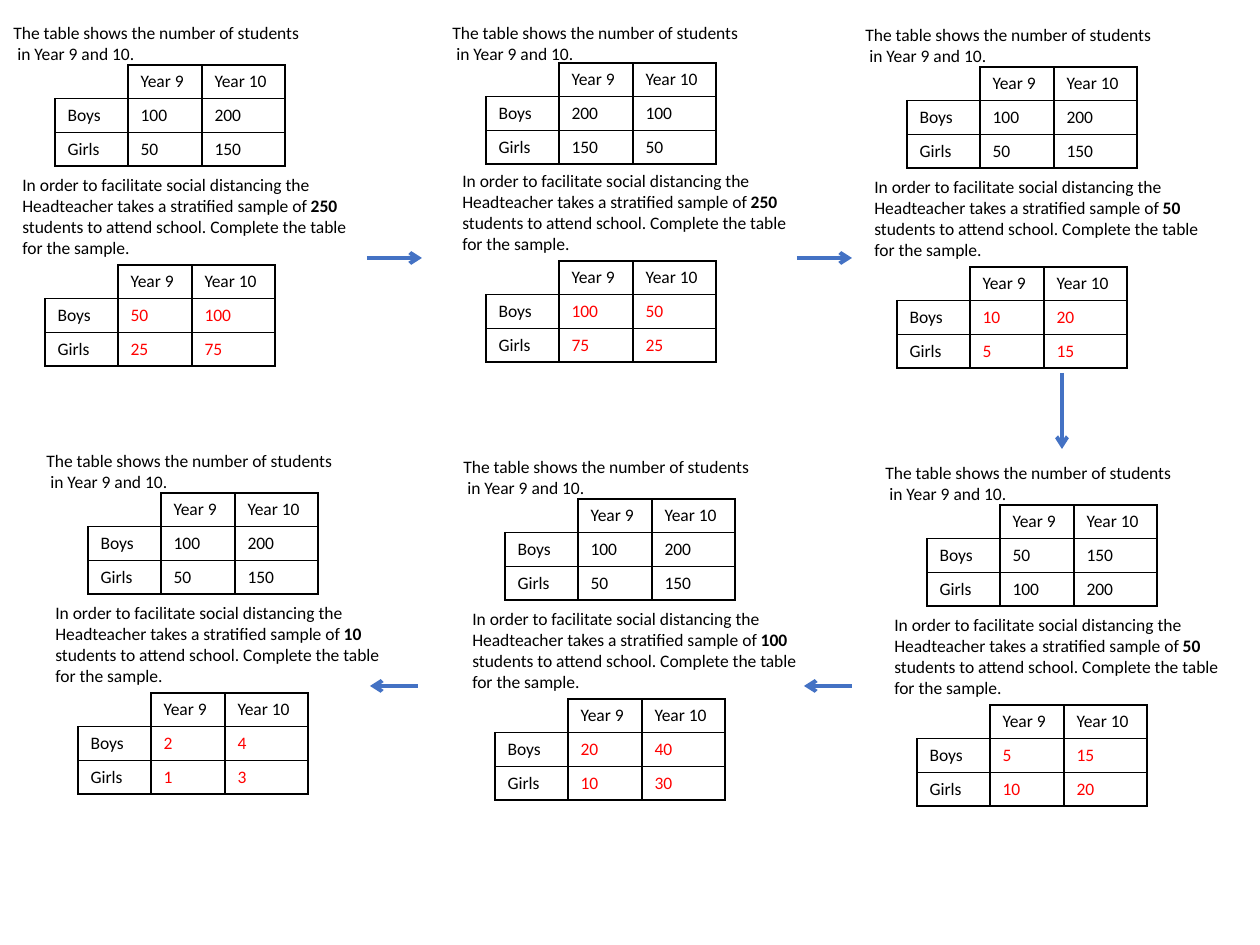
from lxml.etree import SubElement
from pptx import Presentation
from pptx.dml.color import RGBColor
from pptx.enum.shapes import MSO_CONNECTOR
from pptx.enum.text import MSO_AUTO_SIZE
from pptx.oxml.ns import qn
from pptx.util import Emu, Pt

PX = 914400 / 126
COLORS = {"text": "000000", "answer": "FF0000", "border": "000000", "arrow": "4472C4"}


def px(value):
    return Emu(round(value * PX))


def rgb(name):
    return RGBColor.from_string(COLORS[name])


class Worksheet:
    font_name = "Calibri"
    font_size = 10
    column_widths = (73, 74, 83)
    row_heights = (24, 32, 32)

    def __init__(self, page):
        self.page = page

    def style(self, para, color="text"):
        para.font.name = self.font_name
        para.font.size = Pt(self.font_size)
        para.font.color.rgb = rgb(color)

    def text(self, left, top, width, height, paragraphs):
        """Each paragraph is a list of (text, bold) spans."""
        box = self.page.shapes.add_textbox(px(left), px(top), px(width), px(height))
        frame = box.text_frame
        frame.word_wrap = True
        frame.auto_size = MSO_AUTO_SIZE.SHAPE_TO_FIT_TEXT
        for index, spans in enumerate(paragraphs):
            para = frame.add_paragraph() if index else frame.paragraphs[0]
            self.style(para)
            for words, bold in spans:
                span = para.add_run()
                span.text = words
                if bold:
                    span.font.bold = True

    def border(self, cell, sides):
        properties = cell._tc.get_or_add_tcPr()
        for side in sides:
            line = SubElement(properties, qn(f"a:ln{side}"), w=str(Pt(1)))
            fill = SubElement(line, qn("a:solidFill"))
            SubElement(fill, qn("a:srgbClr"), val=COLORS["border"])

    def table(self, left, top, boys, girls, number_color="text"):
        rows = (("", "Year 9", "Year 10"), ("Boys", *boys), ("Girls", *girls))
        table = self.page.shapes.add_table(
            3, 3, px(left), px(top), px(sum(self.column_widths)), px(sum(self.row_heights))
        ).table
        table.first_row = table.horz_banding = False
        for column, width in zip(table.columns, self.column_widths):
            column.width = px(width)
        for row, height in zip(table.rows, self.row_heights):
            row.height = px(height)
        for row_index, values in enumerate(rows):
            for column_index, value in enumerate(values):
                cell = table.cell(row_index, column_index)
                is_number = row_index and column_index
                para = cell.text_frame.paragraphs[0]
                if value != "":
                    para.add_run().text = str(value)
                self.style(para, number_color if is_number else "text")
                if value == "":
                    # An empty cell takes its row height from the end mark
                    SubElement(para._p, qn("a:endParaRPr"), sz=str(self.font_size * 100))
                self.border(cell, "LRTB" if value != "" else "RB")
                cell.fill.background()

    def arrow(self, start_x, start_y, end_x, end_y):
        connector = self.page.shapes.add_connector(
            MSO_CONNECTOR.STRAIGHT, px(start_x), px(start_y), px(end_x), px(end_y)
        )
        connector.line.color.rgb = rgb("arrow")
        connector.line.width = Pt(2.25)
        properties = connector.element.spPr
        SubElement(properties.find(qn("a:ln")), qn("a:tailEnd"), type="arrow")
        SubElement(properties, qn("a:effectLst"))

    def problem(self, left, top, sample, counts, answers, offsets):
        """One panel: heading, given table, question and completed table."""
        question, given, completed = [(left + x, top + y) for x, y in offsets]
        self.text(left, top, 324, 55, [
            [("The table shows the number of students", False)],
            [(" in Year 9 and 10.", False)],
        ])
        self.table(*given, *counts)
        self.text(*question, 367, 97, [[
            ("In order to facilitate social distancing the Headteacher "
             "takes a stratified sample of ", False),
            (str(sample), True),
            (" students to attend school. Complete the table for the sample.", False),
        ]])
        self.table(*completed, *answers, number_color="answer")


# Places of question, given table and completed table, from the panel's corner
OFFSETS = ((9, 152), (54, 49), (44, 249))
TIGHT_OFFSETS = ((10, 148), (46, 47), (46, 245))
COUNTS = ((100, 200), (50, 150))

PROBLEMS = (
    (1, 16, 250, COUNTS, ((50, 100), (25, 75)), OFFSETS),
    (440, 16, 250, ((200, 100), (150, 50)), ((100, 50), (75, 25)), TIGHT_OFFSETS),
    (853, 18, 50, COUNTS, ((10, 20), (5, 15)), OFFSETS),
    (873, 456, 50, ((50, 150), (100, 200)), ((5, 15), (10, 20)), OFFSETS),
    (451, 450, 100, COUNTS, ((20, 40), (10, 30)), OFFSETS),
    (34, 444, 10, COUNTS, ((2, 4), (1, 3)), OFFSETS),
)
ARROWS = (
    (367, 258, 422, 258),
    (797, 258, 852, 258),
    (1062, 373, 1062, 449),
    (852, 686, 804, 686),
    (418, 686, 370, 686),
)


def main():
    deck = Presentation()
    deck.slide_width, deck.slide_height = px(1260), px(945)
    sheet = Worksheet(deck.slides.add_slide(deck.slide_layouts[6]))
    for arrow in ARROWS:
        sheet.arrow(*arrow)
    for problem in PROBLEMS:
        sheet.problem(*problem)
    deck.save("out.pptx")


if __name__ == "__main__":
    main()
